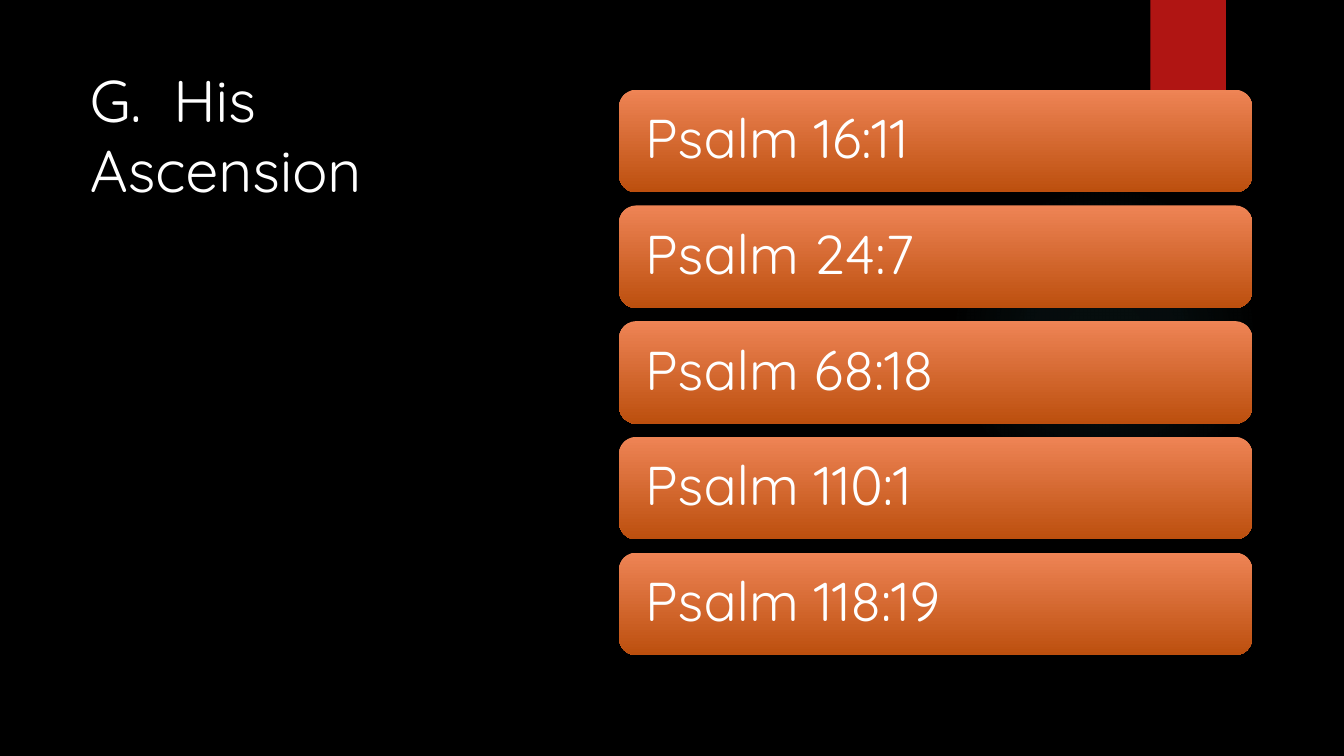
import pptx
import pptx.util
import pptx.dml.color
import pptx.enum.shapes
import pptx.enum.text
import pptx.oxml
import pptx.oxml.ns

Inches = pptx.util.Inches
SHAPES = pptx.enum.shapes.MSO_SHAPE
ANCHORS = pptx.enum.text.MSO_ANCHOR
FONT = "Quicksand"
PSALMS = ["Psalm 16:11", "Psalm 24:7", "Psalm 68:18", "Psalm 110:1", "Psalm 118:19"]


def rgb(code):
    return pptx.dml.color.RGBColor.from_string(code)


def add_plain_shape(slide, kind, left, top, width, height):
    """Add a preset shape without line or shadow."""
    shape = slide.shapes.add_shape(
        kind, Inches(left), Inches(top), Inches(width), Inches(height))
    shape.shadow.inherit = False
    shape.line.fill.background()
    return shape


def style_text(paragraph, size):
    paragraph.alignment = pptx.enum.text.PP_ALIGN.LEFT
    paragraph.font.name = FONT
    paragraph.font.size = pptx.util.Pt(size)
    paragraph.font.color.rgb = rgb("FFFFFF")


def add_glow(slide, left, top, diameter):
    """Add a faint circle that fades out from its centre."""
    glow = add_plain_shape(slide, SHAPES.OVAL, left, top, diameter, diameter)
    stops = "".join(
        f'<a:gs pos="{position * 1000}"><a:srgbClr val="50B9C1">'
        f'<a:alpha val="{opacity * 1000}"/></a:srgbClr></a:gs>'
        for position, opacity in [(0, 7), (36, 6), (69, 0)])
    gradient = pptx.oxml.parse_xml(
        f'<a:gradFill {pptx.oxml.ns.nsdecls("a")}><a:gsLst>{stops}</a:gsLst>'
        '<a:path path="circle"><a:fillToRect l="50000" t="50000" r="50000" b="50000"/>'
        '</a:path></a:gradFill>')
    glow.element.spPr.find(pptx.oxml.ns.qn("a:prstGeom")).addnext(gradient)


def add_ribbon(slide, left, top, width, height):
    ribbon = add_plain_shape(slide, SHAPES.RECTANGLE, left, top, width, height)
    ribbon.fill.solid()
    ribbon.fill.fore_color.rgb = rgb("B01513")


def place_title(slide, left, top, width, height):
    title = slide.shapes.title
    title.left, title.top = Inches(left), Inches(top)
    title.width, title.height = Inches(width), Inches(height)
    frame = title.text_frame
    frame.text = "G.  His Ascension"
    frame.word_wrap = True
    frame.auto_size = pptx.enum.text.MSO_AUTO_SIZE.NONE
    frame.vertical_anchor = ANCHORS.TOP
    style_text(frame.paragraphs[0], 42)


def add_psalm_bar(slide, psalm, left, top, width, height):
    bar = add_plain_shape(slide, SHAPES.ROUNDED_RECTANGLE, left, top, width, height)
    bar.fill.gradient()
    bar.fill.gradient_angle = 270
    for stop, code in zip(bar.fill.gradient_stops, ["EE8455", "BC4F0E"]):
        stop.color.rgb = rgb(code)
    frame = bar.text_frame
    frame.text = psalm
    frame.word_wrap = True
    frame.vertical_anchor = ANCHORS.MIDDLE
    frame.margin_left = frame.margin_right = Inches(0.21)
    frame.paragraphs[0].line_spacing = 0.9
    style_text(frame.paragraphs[0], 39)


def add_psalm_list(slide, left, top, width, height, gap=0.13):
    bar_height = (height + gap) / len(PSALMS) - gap
    for row, psalm in enumerate(PSALMS):
        add_psalm_bar(slide, psalm, left, top + row * (bar_height + gap), width, bar_height)


def main():
    deck = pptx.Presentation()
    deck.slide_width, deck.slide_height = Inches(13.33), Inches(7.5)
    slide = deck.slides.add_slide(deck.slide_layouts.get_by_name("Title Only"))
    slide.background.fill.solid()
    slide.background.fill.fore_color.rgb = rgb("000000")
    add_glow(slide, 9.41, 1.83, 3.08)
    add_ribbon(slide, 11.41, 0, 0.75, 1.25)
    place_title(slide, 0.79, 0.58, 3.51, 5.79)
    add_psalm_list(slide, 6.14, 0.89, 6.28, 5.61)
    deck.save("out.pptx")


if __name__ == "__main__":
    main()
